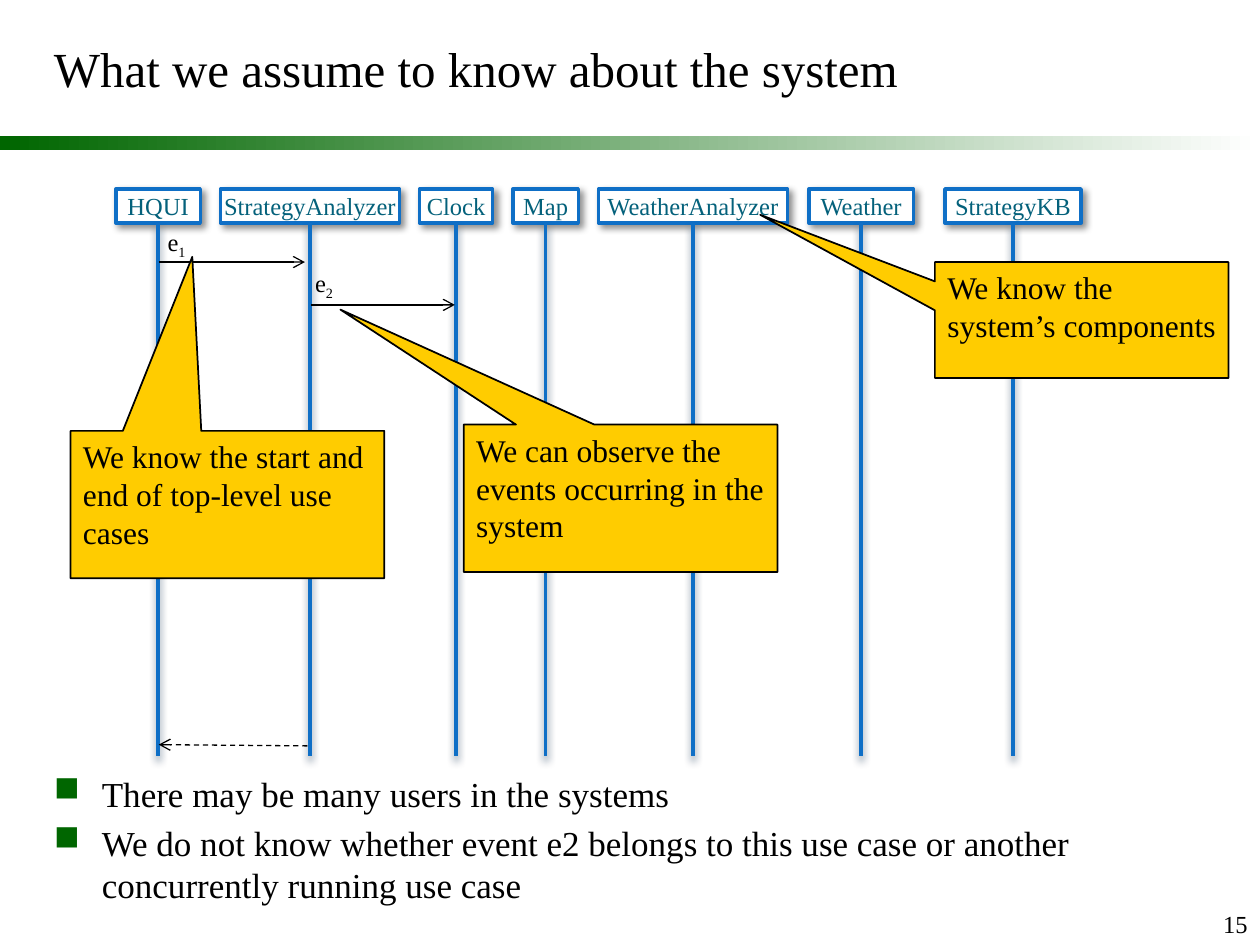
"""Build a sequence diagram slide about what is known of a system."""
from dataclasses import dataclass

from lxml.etree import SubElement
from pptx import Presentation
from pptx.dml.color import RGBColor
from pptx.enum.dml import MSO_LINE
from pptx.enum.shapes import MSO_CONNECTOR, MSO_SHAPE
from pptx.enum.text import MSO_ANCHOR, PP_ALIGN
from pptx.oxml.ns import qn
from pptx.util import Inches, Pt


@dataclass(frozen=True)
class Theme:
    """Colours, font and type sizes."""
    font: str = "Times New Roman"
    black: str = "000000"
    white: str = "FFFFFF"
    green: str = "006600"
    blue: str = "0F6FC6"
    teal: str = "04617B"
    amber: str = "FFCC00"
    navy: str = "042747"
    title: int = 28
    body: int = 20
    callout: int = 18
    label: int = 14


THEME = Theme()
TITLE = "What we assume to know about the system"
PAGE = "15"
BULLETS = [
    "There may be many users in the systems",
    "We do not know whether event e2 belongs to this use case or another concurrently running use case",
]
COMPONENTS = [
    ("HQUI", 0.92, 0.67),
    ("StrategyAnalyzer", 1.75, 1.42),
    ("Clock", 3.33, 0.58),
    ("Map", 4.07, 0.52),
    ("WeatherAnalyzer", 4.75, 1.5),
    ("Weather", 6.42, 0.83),
    ("StrategyKB", 7.5, 1.08),
]
MESSAGES = [
    ((1.26, 2.08), (2.42, 2.08), False),
    ((2.47, 2.42), (3.61, 2.42), False),
    ((2.44, 5.92), (1.26, 5.91), True),
]
EVENTS = [("1", 1.33, 1.75), ("2", 2.5, 2.08)]
CALLOUTS = [
    (["We know the ", "system’s components"], (7.42, 2.08, 2.33, 0.92), (-1.095, -0.908), False),
    (["We know the start and end of top-level use cases"],
     (0.56, 3.42, 2.49, 1.17), (-0.112, -1.681), True),
    (["We can observe the events occurring in the system"],
     (3.68, 3.37, 2.49, 1.17), (-0.893, -1.28), True),
]
BOX_TOP, BOX_HEIGHT, LIFELINE_END = 1.5, 0.27, 6


def color(value):
    """Return the colour of a hex value."""
    return RGBColor.from_string(value)


def add_run(paragraph, text, size, text_color=THEME.black):
    """Add a styled run."""
    run = paragraph.add_run()
    run.text = text
    run.font.name = THEME.font
    run.font.size = Pt(size)
    run.font.color.rgb = color(text_color)
    return run


def add_text_box(slide, box, anchor=MSO_ANCHOR.TOP):
    """Add a wrapping text box and return its frame."""
    frame = slide.shapes.add_textbox(*map(Inches, box)).text_frame
    frame.word_wrap = True
    frame.vertical_anchor = anchor
    return frame


def add_block(slide, kind, box, fill, line, width):
    """Add a filled and outlined shape."""
    shape = slide.shapes.add_shape(kind, *map(Inches, box))
    shape.shadow.inherit = False
    shape.fill.solid()
    shape.fill.fore_color.rgb = color(fill)
    shape.line.color.rgb = color(line)
    shape.line.width = Pt(width)
    return shape


def add_line(slide, start, end, line, width):
    """Add a straight connector without a shadow."""
    connector = slide.shapes.add_connector(MSO_CONNECTOR.STRAIGHT, *map(Inches, start + end))
    connector.line.color.rgb = color(line)
    connector.line.width = Pt(width)
    SubElement(connector._element.spPr, qn("a:effectLst"))
    return connector


def cast_shadow(shape, shade, opacity, blur, angle):
    """Give a shape an outer shadow."""
    effects = shape._element.spPr.find(qn("a:effectLst"))
    shadow = SubElement(effects, qn("a:outerShdw"), blurRad=str(Pt(blur)), dist=str(Pt(3)),
                        dir=str(angle * 60000), algn="ctr", rotWithShape="0")
    tint = SubElement(shadow, qn("a:srgbClr"), val=shade)
    SubElement(tint, qn("a:alpha"), val=str(opacity * 1000))


def add_bullet(paragraph, text):
    """Fill a paragraph as a square-bulleted item."""
    paragraph.space_before = Pt(4)
    properties = paragraph._p.get_or_add_pPr()
    properties.set("marL", str(Inches(0.38)))
    properties.set("indent", str(Inches(-0.38)))
    bullet_color = SubElement(properties, qn("a:buClr"))
    SubElement(bullet_color, qn("a:srgbClr"), val=THEME.green)
    SubElement(properties, qn("a:buChar"), char="■")
    add_run(paragraph, text, THEME.body)


def add_frame_parts(slide):
    """Add the rule, title, bullets and page number."""
    rule = add_block(slide, MSO_SHAPE.RECTANGLE, (0, 1.08, 10, 0.11), THEME.green, THEME.green, 1)
    rule.line.fill.background()
    rule.fill.gradient()
    rule.fill.gradient_angle = 0
    for stop, shade, position in zip(rule.fill.gradient_stops, (THEME.green, THEME.white), (0, 1)):
        stop.color.rgb = color(shade)
        stop.position = position
    title = add_text_box(slide, (0.33, 0, 9.42, 1.08), MSO_ANCHOR.MIDDLE)
    add_run(title.paragraphs[0], TITLE, THEME.title)
    body = add_text_box(slide, (0.33, 6.08, 9.42, 1.08))
    for index, text in enumerate(BULLETS):
        add_bullet(body.add_paragraph() if index else body.paragraphs[0], text)
    number = add_text_box(slide, (9.16, 7, 0.84, 0.5), MSO_ANCHOR.BOTTOM).paragraphs[0]
    number.alignment = PP_ALIGN.RIGHT
    add_run(number, PAGE, THEME.label)


def add_component(slide, name, left, width):
    """Add a component box with its lifeline."""
    box = add_block(slide, MSO_SHAPE.RECTANGLE, (left, BOX_TOP, width, BOX_HEIGHT),
                    THEME.white, THEME.blue, 2)
    cast_shadow(box, THEME.black, 43, 4, 45)
    frame = box.text_frame
    frame.margin_left = frame.margin_right = frame.margin_top = frame.margin_bottom = 0
    frame.vertical_anchor = MSO_ANCHOR.MIDDLE
    frame.paragraphs[0].alignment = PP_ALIGN.CENTER
    add_run(frame.paragraphs[0], name, THEME.label, THEME.teal)
    center = left + width / 2
    lifeline = add_line(slide, (center, BOX_TOP + BOX_HEIGHT), (center, LIFELINE_END),
                        THEME.blue, 2)
    lifeline.begin_connect(box, 2)
    cast_shadow(lifeline, THEME.navy, 48, 4.5, 90)


def add_message(slide, start, end, dashed):
    """Add a message arrow."""
    arrow = add_line(slide, start, end, THEME.black, 0.75)
    if dashed:
        arrow.line.dash_style = MSO_LINE.DASH
    SubElement(arrow._element.spPr.find(qn("a:ln")), qn("a:tailEnd"), type="arrow")


def add_event(slide, index, left, top):
    """Add an event label with a subscript."""
    frame = add_text_box(slide, (left, top, 0.25, 0.34))
    frame.margin_left = frame.margin_right = 0
    add_run(frame.paragraphs[0], "e", THEME.label)
    subscript = add_run(frame.paragraphs[0], index, THEME.label)
    subscript.font._element.set("baseline", "-25000")


def add_callout(slide, lines, box, pointer, wraps):
    """Add a callout pointing into the diagram."""
    callout = add_block(slide, MSO_SHAPE.RECTANGULAR_CALLOUT, box, THEME.amber, THEME.black, 1)
    callout.adjustments[0], callout.adjustments[1] = pointer
    frame = callout.text_frame
    frame.word_wrap = wraps
    frame.vertical_anchor = MSO_ANCHOR.TOP
    paragraph = frame.paragraphs[0]
    paragraph.alignment = PP_ALIGN.LEFT
    for index, line in enumerate(lines):
        if index:
            paragraph.add_line_break()
        add_run(paragraph, line, THEME.callout)


def main():
    """Assemble and save the slide."""
    presentation = Presentation()
    presentation.slide_width, presentation.slide_height = Inches(10), Inches(7.5)
    slide = presentation.slides.add_slide(presentation.slide_layouts[6])
    add_frame_parts(slide)
    for add_part, rows in ((add_component, COMPONENTS), (add_message, MESSAGES),
                           (add_event, EVENTS), (add_callout, CALLOUTS)):
        for row in rows:
            add_part(slide, *row)
    presentation.save("out.pptx")


if __name__ == "__main__":
    main()
